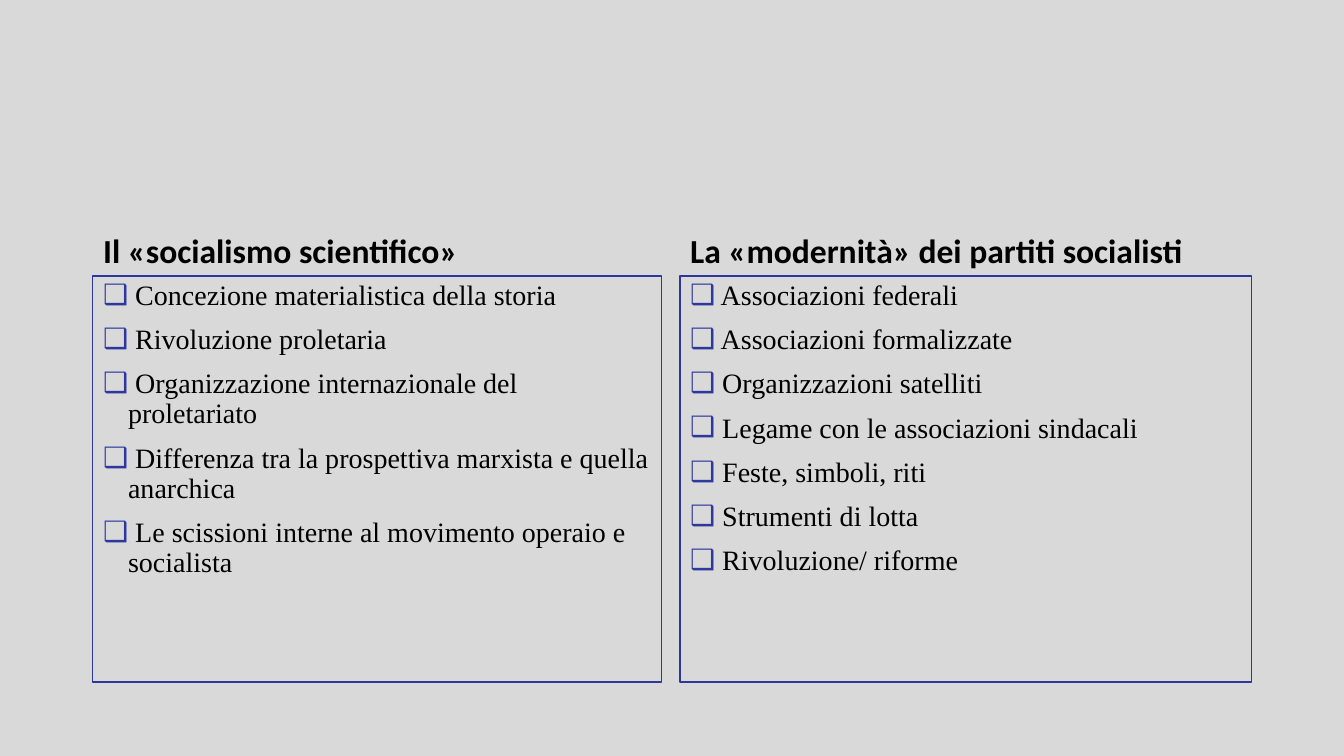
from lxml import etree
from pptx import Presentation
from pptx.dml.color import RGBColor
from pptx.enum.text import MSO_ANCHOR, MSO_AUTO_SIZE, PP_ALIGN
from pptx.oxml.ns import qn
from pptx.util import Pt

EMU_PER_PX = 914400 / 100.8
COMPARISON_LAYOUT = 3 + 1
TOP, BOTTOM, LEFT = PP_ALIGN.LEFT and MSO_ANCHOR.TOP, MSO_ANCHOR.BOTTOM, PP_ALIGN.LEFT
NO_AUTOFIT = MSO_AUTO_SIZE.NONE

BACKGROUND, INK, BLUE = "D9D9D9", "000000", "2E379E"
HEADING_FONT = {"name": "Calibri", "size": Pt(24), "bold": True}
LIST_FONT = {"name": "Times New Roman", "size": Pt(20), "bold": False}
HEADING_HEIGHT = 91
BULLET_INDENT = 25

COLUMNS = [
    {
        "box": (93, 185, 569, 497),
        "placeholders": (1, 2),
        "heading": "Il «socialismo scientifico»",
        "items": [
            "Concezione materialistica della storia",
            "Rivoluzione proletaria",
            "Organizzazione internazionale del proletariato",
            "Differenza tra la prospettiva marxista e quella anarchica",
            "Le scissioni interne al movimento operaio e socialista",
        ],
    },
    {
        "box": (680, 185, 572, 497),
        "placeholders": (3, 4),
        "heading": "La «modernità» dei partiti socialisti",
        "items": [
            "Associazioni federali",
            "Associazioni formalizzate",
            "Organizzazioni satelliti",
            "Legame con le associazioni sindacali",
            "Feste, simboli, riti",
            "Strumenti di lotta",
            "Rivoluzione/ riforme",
        ],
    },
]


def px(length):
    return round(length * EMU_PER_PX)


def color(hex_value):
    return RGBColor.from_string(hex_value)


def set_attributes(target, values):
    for name, value in values.items():
        setattr(target, name, value)


def add_bullet(paragraph):
    properties = paragraph._p.get_or_add_pPr()
    properties.set("marL", str(px(BULLET_INDENT)))
    properties.set("indent", str(-px(BULLET_INDENT)))
    bullet_color = etree.SubElement(properties, qn("a:buClr"))
    etree.SubElement(bullet_color, qn("a:srgbClr"), val=BLUE)
    etree.SubElement(properties, qn("a:buChar"), char="❑")


def fill_text(shape, box, lines, font, anchor, bulleted=False):
    """Place a placeholder in its box and write one paragraph per line."""
    left, top, width, height = map(px, box)
    set_attributes(shape, {"left": left, "top": top, "width": width, "height": height})
    frame = shape.text_frame
    set_attributes(frame, {"word_wrap": True, "auto_size": NO_AUTOFIT, "vertical_anchor": anchor})
    for index, line in enumerate(lines):
        paragraph = frame.add_paragraph() if index else frame.paragraphs[0]
        space_before = Pt(10 if index else 0)
        set_attributes(paragraph, {"alignment": LEFT, "line_spacing": 0.9, "space_before": space_before})
        if bulleted:
            add_bullet(paragraph)
        run = paragraph.add_run()
        # The wide bullet fills the indent, so a space separates it from the words.
        run.text = f" {line}" if bulleted else line
        set_attributes(run.font, font)
        run.font.color.rgb = color(INK)


def add_column(slide, box, placeholders, heading, items):
    """Stack a heading on an outlined list inside the box."""
    left, top, width, height = box
    shapes = {shape.placeholder_format.idx: shape for shape in slide.placeholders}
    heading_shape, list_shape = (shapes[index] for index in placeholders)
    heading_box = (left, top, width, HEADING_HEIGHT)
    list_box = (left, top + HEADING_HEIGHT, width, height - HEADING_HEIGHT)
    fill_text(heading_shape, heading_box, [heading], HEADING_FONT, BOTTOM)
    fill_text(list_shape, list_box, items, LIST_FONT, TOP, bulleted=True)
    list_shape.line.color.rgb = color(BLUE)
    list_shape.line.width = Pt(0.75)


def add_comparison_slide(presentation, columns):
    slide = presentation.slides.add_slide(presentation.slide_layouts[COMPARISON_LAYOUT])
    background = slide.background.fill
    background.solid()
    background.fore_color.rgb = color(BACKGROUND)
    title = slide.shapes.title.element
    title.getparent().remove(title)
    for column in columns:
        add_column(slide, **column)


def main():
    presentation = Presentation()
    set_attributes(presentation, {"slide_width": px(1344), "slide_height": px(756)})
    add_comparison_slide(presentation, COLUMNS)
    presentation.save("out.pptx")


if __name__ == "__main__":
    main()
